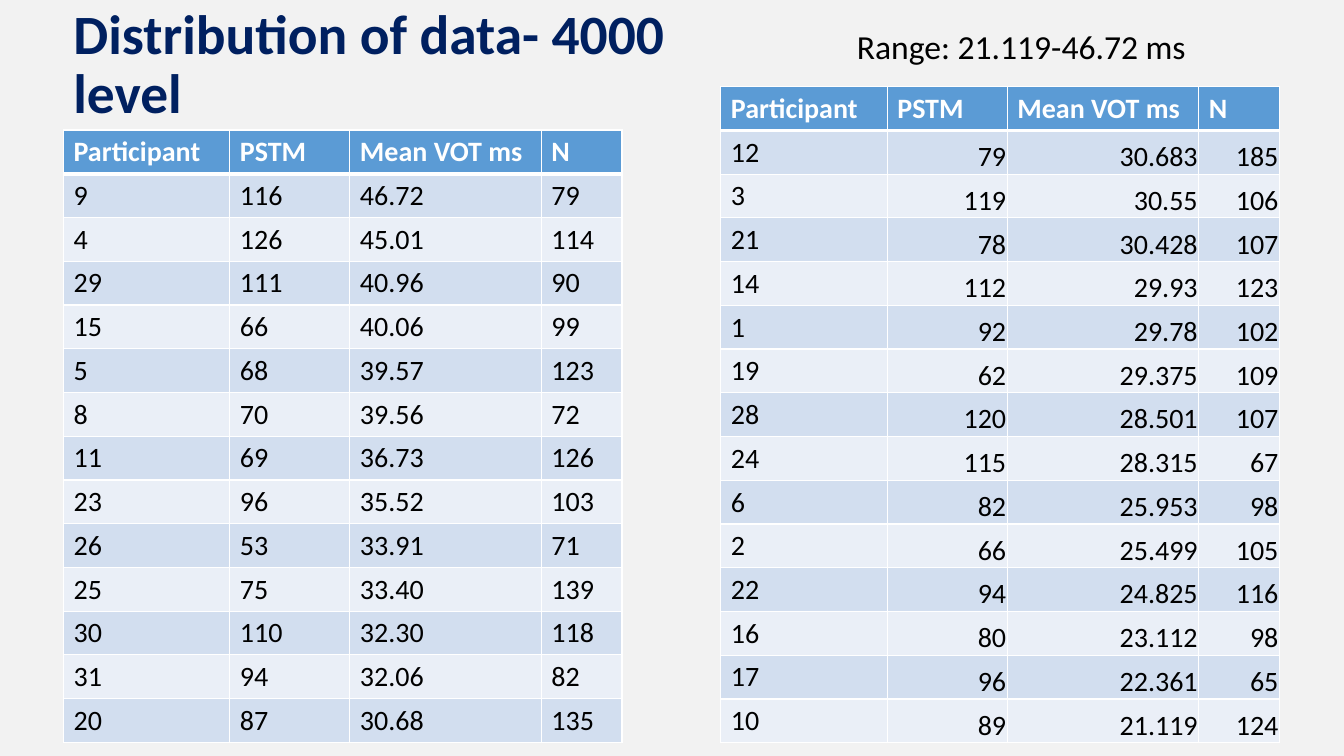
from lxml import etree
from pptx import Presentation
from pptx.dml.color import RGBColor
from pptx.enum.text import MSO_ANCHOR, PP_ALIGN
from pptx.oxml.ns import qn
from pptx.util import Inches, Pt

LEFT, RIGHT = PP_ALIGN.LEFT, PP_ALIGN.RIGHT
TOP, MIDDLE, BOTTOM = MSO_ANCHOR.TOP, MSO_ANCHOR.MIDDLE, MSO_ANCHOR.BOTTOM

BACKGROUND = RGBColor(0xF2, 0xF2, 0xF2)
NAVY = RGBColor(0x00, 0x20, 0x60)
BLACK = RGBColor(0x00, 0x00, 0x00)
WHITE = RGBColor(0xFF, 0xFF, 0xFF)
HEADER_BLUE = RGBColor(0x5B, 0x9B, 0xD5)
BAND_DARK = RGBColor(0xD2, 0xDE, 0xEF)
BAND_LIGHT = RGBColor(0xEA, 0xEF, 0xF7)

HEADER = ("Participant", "PSTM", "Mean VOT ms", "N")
COLUMN_WIDTHS = (1.65, 1.19, 1.9, 0.8)
ROW_HEIGHT = 0.41

HIGH_VOT = [
    ("9", "116", "46.72", "79"),
    ("4", "126", "45.01", "114"),
    ("29", "111", "40.96", "90"),
    ("15", "66", "40.06", "99"),
    ("5", "68", "39.57", "123"),
    ("8", "70", "39.56", "72"),
    ("11", "69", "36.73", "126"),
    ("23", "96", "35.52", "103"),
    ("26", "53", "33.91", "71"),
    ("25", "75", "33.40", "139"),
    ("30", "110", "32.30", "118"),
    ("31", "94", "32.06", "82"),
    ("20", "87", "30.68", "135"),
]
LOW_VOT = [
    ("12", "79", "30.683", "185"),
    ("3", "119", "30.55", "106"),
    ("21", "78", "30.428", "107"),
    ("14", "112", "29.93", "123"),
    ("1", "92", "29.78", "102"),
    ("19", "62", "29.375", "109"),
    ("28", "120", "28.501", "107"),
    ("24", "115", "28.315", "67"),
    ("6", "82", "25.953", "98"),
    ("2", "66", "25.499", "105"),
    ("22", "94", "24.825", "116"),
    ("16", "80", "23.112", "98"),
    ("17", "96", "22.361", "65"),
    ("10", "89", "21.119", "124"),
]


def write(frame, text, size=20, color=BLACK, bold=False, align=LEFT, spacing=1.0):
    para = frame.paragraphs[0]
    para.alignment = align
    para.line_spacing = spacing
    span = para.add_run()
    span.text = text
    span.font.name = "Calibri"
    span.font.size = Pt(size)
    span.font.bold = bold
    span.font.color.rgb = color


def add_borders(cell, top=1, bottom=1):
    # Border lines come before the fill in the cell properties
    properties = cell._tc.get_or_add_tcPr()
    sides = (("a:lnL", 1), ("a:lnR", 1), ("a:lnT", top), ("a:lnB", bottom))
    for position, (tag, width) in enumerate(sides):
        line = etree.Element(qn(tag), w=str(Pt(width)))
        solid = etree.SubElement(line, qn("a:solidFill"))
        etree.SubElement(solid, qn("a:srgbClr"), val=str(WHITE))
        properties.insert(position, line)


deck = Presentation()
deck.slide_width, deck.slide_height = Inches(13.33), Inches(7.5)
page = deck.slides.add_slide(deck.slide_layouts[6])
page.background.fill.solid()
page.background.fill.fore_color.rgb = BACKGROUND

# Title and range
texts = [
    ("Distribution of data- 4000 level", (0.63, 0.21, 6.23, 0.89), MIDDLE,
     dict(size=39.6, color=NAVY, bold=True, spacing=0.9)),
    ("Range: 21.119-46.72 ms", (8.4, 0.21, 3.57, 0.5), TOP, dict(size=24)),
]
for text, place, anchor, style in texts:
    box = page.shapes.add_textbox(*map(Inches, place))
    box.text_frame.word_wrap = True
    box.text_frame.vertical_anchor = anchor
    write(box.text_frame, text, **style)

# Participant tables; the second one sets its numbers flush right
tables = [(HIGH_VOT, 0.63, 1.29, False), (LOW_VOT, 7.15, 0.86, True)]
for records, left, top, flush_right in tables:
    rows = [HEADER] + records
    table = page.shapes.add_table(
        len(rows), len(HEADER), Inches(left), Inches(top),
        Inches(sum(COLUMN_WIDTHS)), Inches(ROW_HEIGHT * len(rows))).table
    for column, width in zip(table.columns, COLUMN_WIDTHS):
        column.width = Inches(width)
    for r, row in enumerate(rows):
        table.rows[r].height = Inches(ROW_HEIGHT)
        is_header = r == 0
        band = BAND_DARK if r % 2 else BAND_LIGHT
        for c, text in enumerate(row):
            cell = table.cell(r, c)
            cell.fill.solid()
            cell.fill.fore_color.rgb = HEADER_BLUE if is_header else band
            add_borders(cell, top=3 if r == 1 else 1, bottom=3 if is_header else 1)
            is_flush = flush_right and not is_header and c > 0
            if is_flush:
                cell.vertical_anchor = BOTTOM
                cell.margin_left = cell.margin_right = cell.margin_top = Inches(0.01)
                cell.margin_bottom = 0
            write(cell.text_frame, text, color=WHITE if is_header else BLACK,
                  bold=is_header, align=RIGHT if is_flush else LEFT)

deck.save("out.pptx")
